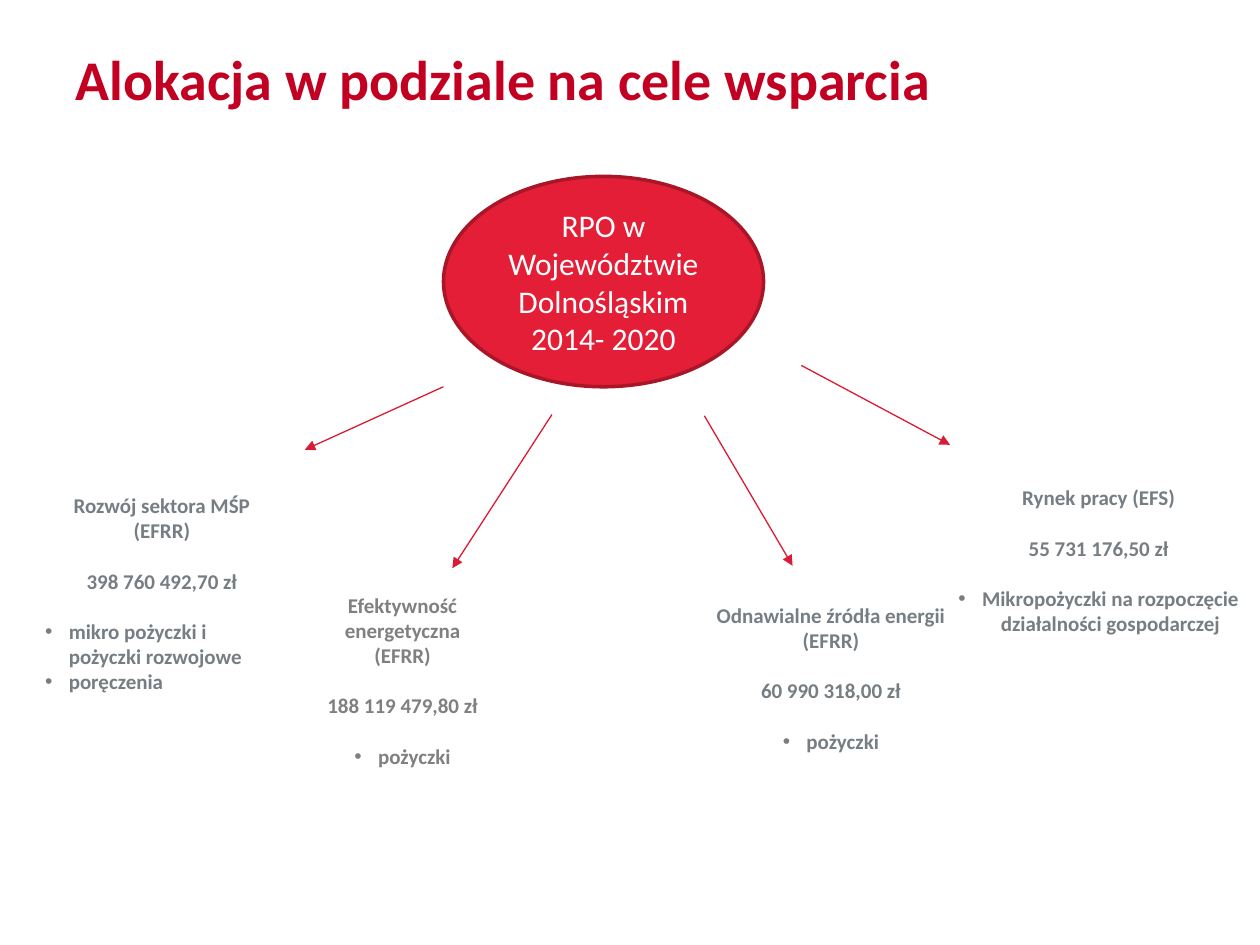
from lxml import etree
from pptx import Presentation
from pptx.dml.color import RGBColor
from pptx.enum.shapes import MSO_CONNECTOR, MSO_SHAPE
from pptx.enum.text import MSO_ANCHOR, MSO_AUTO_SIZE, PP_ALIGN
from pptx.oxml.ns import qn
from pptx.util import Pt

LEFT, CENTER = PP_ALIGN.LEFT, PP_ALIGN.CENTER
TOP, MIDDLE = MSO_ANCHOR.TOP, MSO_ANCHOR.MIDDLE
FIT_SHAPE, NO_FIT = MSO_AUTO_SIZE.SHAPE_TO_FIT_TEXT, MSO_AUTO_SIZE.NONE
STRAIGHT, OVAL = MSO_CONNECTOR.STRAIGHT, MSO_SHAPE.OVAL

DARK_RED = RGBColor(0xC2, 0x00, 0x21)
RED = RGBColor(0xE3, 0x1E, 0x36)
RIM_RED = RGBColor(0xA8, 0x16, 0x28)
ARROW_RED = RGBColor(0xDA, 0x1B, 0x33)
WHITE = RGBColor(0xFF, 0xFF, 0xFF)
SLATE = RGBColor(0x76, 0x7E, 0x84)
GRAY = RGBColor(0x80, 0x80, 0x80)

# Content; boxes are left, top, width, height in points
TITLE = "Alokacja w podziale na cele wsparcia"
TITLE_BOX = (36, 21.6, 536.4, 90)
PROGRAMME = "RPO w Województwie Dolnośląskim 2014- 2020"
PROGRAMME_BOX = (253.44, 100.8, 182.88, 120.24)
GOALS = [
    {"heading": ["Rynek pracy (EFS)"], "amount": "55 731 176,50 zł",
     "forms": ["Mikropożyczki na rozpoczęcie działalności gospodarczej"],
     "align": CENTER, "color": SLATE, "box": (535.6, 273.6, 184.4, 123.8),
     "arrow": (457.9, 208.8, 542.9, 254.2)},
    {"heading": ["Odnawialne źródła energii", "(EFRR)"], "amount": "60 990 318,00 zł",
     "forms": ["pożyczki"],
     "align": CENTER, "color": SLATE, "box": (370.1, 340.6, 209.5, 94.3),
     "arrow": (402.5, 237.6, 452.9, 323.3)},
    {"heading": ["Rozwój sektora MŚP (EFRR)"], "amount": "398 760 492,70 zł",
     "forms": ["mikro pożyczki i pożyczki rozwojowe", "poręczenia"],
     "align": LEFT, "color": SLATE, "box": (18.7, 277.9, 147.6, 138.2),
     "arrow": (253.4, 221, 174.2, 257)},
    {"heading": ["Efektywność energetyczna", "(EFRR)"], "amount": "188 119 479,80 zł",
     "forms": ["pożyczki"],
     "align": CENTER, "color": GRAY, "box": (162, 334.8, 136.1, 123.8),
     "arrow": (315.4, 236.9, 258.5, 324.7)},
]
GOAL_SIZE = 12
GAP = 14.4  # one line of goal text
INDENT = Pt(13.5)


def points(values):
    return [Pt(value) for value in values]


def set_font(paragraph, size, color, bold):
    settings = {"name": "Calibri", "size": Pt(size), "bold": bold}
    for attribute, value in settings.items():
        setattr(paragraph.font, attribute, value)
    paragraph.font.color.rgb = color


def add_bullet(paragraph):
    properties = paragraph._p.get_or_add_pPr()
    properties.set("marL", str(INDENT))
    properties.set("indent", str(-INDENT))
    etree.SubElement(properties, qn("a:buFont")).set("typeface", "Arial")
    etree.SubElement(properties, qn("a:buChar")).set("char", "•")


def add_arrow(slide, ends):
    arrow = slide.shapes.add_connector(STRAIGHT, *points(ends))
    arrow.line.color.rgb = ARROW_RED
    arrow.line.width = Pt(0.75)
    line = arrow.line._get_or_add_ln()
    etree.SubElement(line, qn("a:tailEnd")).set("type", "triangle")
    etree.SubElement(arrow._element.spPr, qn("a:effectLst"))


def add_goal(slide, goal):
    frame = slide.shapes.add_textbox(*points(goal["box"])).text_frame
    frame.word_wrap = True
    frame.auto_size = FIT_SHAPE
    # Each line: text, alignment, gap above, bulleted
    lines = [(text, CENTER, 0, False) for text in goal["heading"]]
    lines.append((goal["amount"], CENTER, GAP, False))
    lines += [(text, goal["align"], 0 if i else GAP, True)
              for i, text in enumerate(goal["forms"])]
    for i, (text, align, gap, bulleted) in enumerate(lines):
        paragraph = frame.add_paragraph() if i else frame.paragraphs[0]
        paragraph.text = text
        paragraph.alignment = align
        if gap:
            paragraph.space_before = Pt(gap)
        if bulleted:
            add_bullet(paragraph)
        set_font(paragraph, GOAL_SIZE, goal["color"], True)


def main():
    deck = Presentation()
    deck.slide_width, deck.slide_height = Pt(720), Pt(540)
    slide = deck.slides.add_slide(deck.slide_layouts[5])

    # Title
    title = slide.shapes.title
    title.left, title.top, title.width, title.height = points(TITLE_BOX)
    title.text_frame.text = TITLE
    title.text_frame.vertical_anchor = TOP
    title.text_frame.auto_size = NO_FIT
    title.text_frame.paragraphs[0].alignment = LEFT
    set_font(title.text_frame.paragraphs[0], 32, DARK_RED, True)

    # Programme in the centre
    programme = slide.shapes.add_shape(OVAL, *points(PROGRAMME_BOX))
    programme.shadow.inherit = False
    programme.fill.solid()
    programme.fill.fore_color.rgb = RED
    programme.line.color.rgb = RIM_RED
    programme.line.width = Pt(2)
    programme.text_frame.text = PROGRAMME
    programme.text_frame.word_wrap = True
    programme.text_frame.vertical_anchor = MIDDLE
    programme.text_frame.paragraphs[0].alignment = CENTER
    set_font(programme.text_frame.paragraphs[0], 18, WHITE, False)

    # Support goals and the arrows to them
    for goal in GOALS:
        add_arrow(slide, goal["arrow"])
        add_goal(slide, goal)

    deck.save("out.pptx")


if __name__ == "__main__":
    main()
